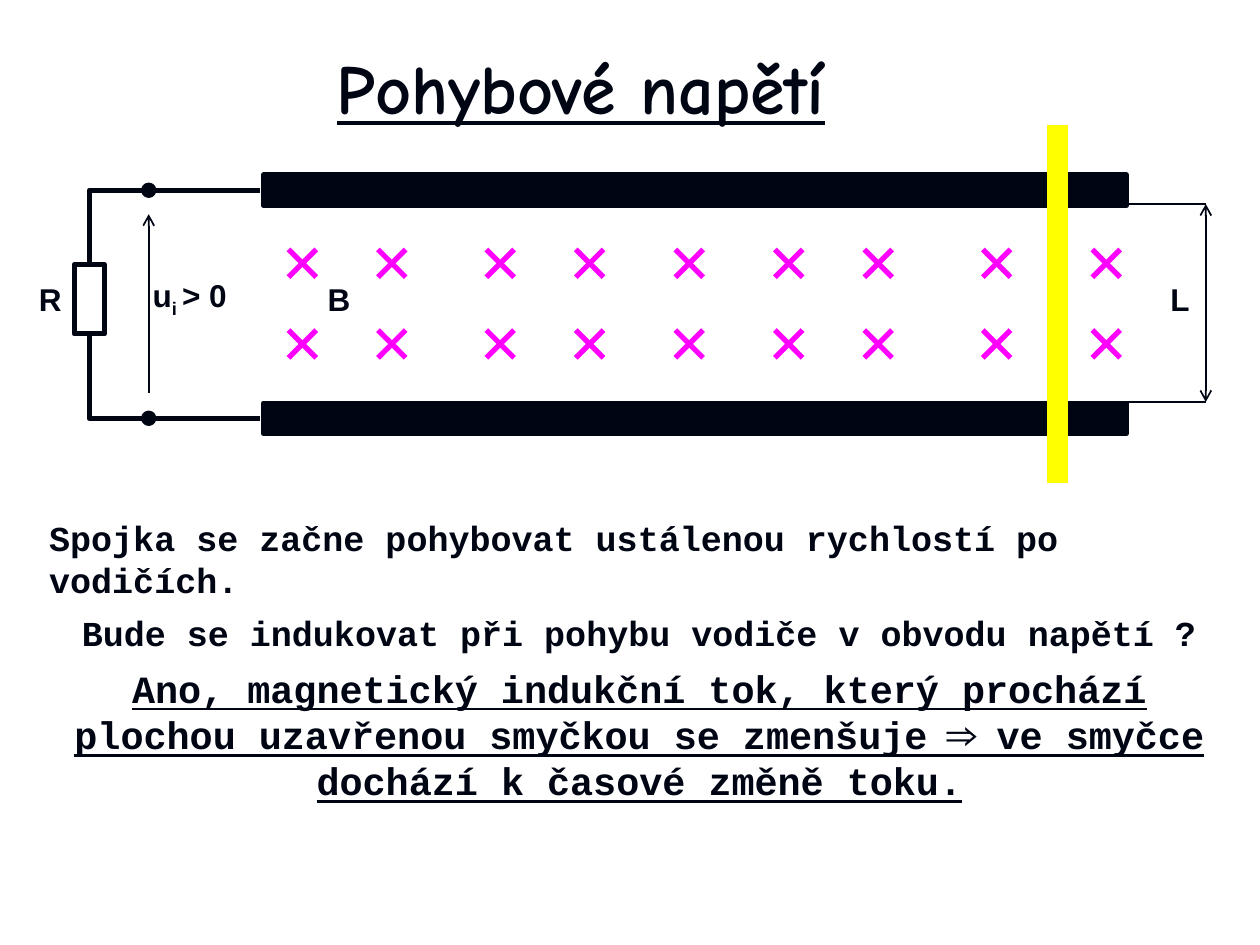
from lxml import etree
from pptx import Presentation
from pptx.dml.color import RGBColor
from pptx.enum.shapes import MSO_CONNECTOR, MSO_SHAPE
from pptx.enum.text import MSO_ANCHOR, MSO_AUTO_SIZE, PP_ALIGN
from pptx.oxml.ns import qn
from pptx.util import Inches, Pt

INK, FIELD, ROD = "000514", "FF00FF", "FFFF00"

TITLE = "Pohybové napětí"
BODY = [  # text, size, alignment, underline
    ("Spojka se začne pohybovat ustálenou rychlostí po vodičích.", 20, PP_ALIGN.LEFT, False),
    ("Bude se indukovat při pohybu vodiče v obvodu napětí ?", 20, PP_ALIGN.CENTER, False),
    ("Ano, magnetický indukční tok, který prochází plochou uzavřenou smyčkou "
     "se zmenšuje ⇒ ve smyčce dochází k časové změně toku.", 22, PP_ALIGN.CENTER, True),
]
LABELS = [("R", 0.27, 0.26), ("B", 2.56, 0.26), ("L", 9.25, 0.23)]  # text, left, width

RAIL_LEFT, RAIL_WIDTH, RAIL_HEIGHT = 2.09, 6.85, 0.24
RAIL_TOPS = (1.39, 3.2)
RESISTOR = (0.59, 2.1, 0.24, 0.55)
WIRES = [
    [(2.06, 1.51), (0.71, 1.51), (0.71, 2.08)],
    [(0.71, 2.67), (0.71, 3.32), (2.06, 3.32)],
]
TERMINAL_X, TERMINAL_SIZE = 1.18, 0.08
CROSS_LEFTS = (2.29, 3, 3.86, 4.57, 5.36, 6.15, 6.86, 7.8, 8.67)
CROSS_TOPS = (1.98, 2.62)
CROSS_SIZE = 0.22
GAP_TOP, GAP_BOTTOM, GAP_X = 1.62, 3.19, 9.57


def color(value):
    return RGBColor.from_string(value)


def add_line(page, start, end, line_color=INK, width=1, arrows=()):
    """Draw a straight line; arrows holds headEnd (start) and/or tailEnd (end)."""
    line = page.shapes.add_connector(
        MSO_CONNECTOR.STRAIGHT, *(Inches(value) for value in (*start, *end)))
    line.line.color.rgb = color(line_color)
    line.line.width = Pt(width)
    properties = line.line._get_or_add_ln()
    for arrow in arrows:
        etree.SubElement(properties, qn(f"a:{arrow}"), type="arrow")
    etree.SubElement(line._element.spPr, qn("a:effectLst"))
    return line


def style(shape, fill=None):
    shape.shadow.inherit = False
    if fill:
        shape.fill.solid()
        shape.fill.fore_color.rgb = color(fill)
    else:
        shape.fill.background()
    shape.line.color.rgb = color(INK)
    shape.line.width = Pt(3)


def add_preset(page, kind, area, fill=None):
    shape = page.shapes.add_shape(kind, *(Inches(value) for value in area))
    style(shape, fill)


def add_wire(page, points):
    corners = [(Inches(x), Inches(y)) for x, y in points]
    builder = page.shapes.build_freeform(*corners[0])
    builder.add_line_segments(corners[1:], close=False)
    style(builder.convert_to_shape())


def add_box(page, area, anchor=MSO_ANCHOR.TOP, wrap=True):
    box = page.shapes.add_textbox(*(Inches(value) for value in area))
    frame = box.text_frame
    frame.word_wrap = wrap
    frame.auto_size = MSO_AUTO_SIZE.NONE if wrap else MSO_AUTO_SIZE.SHAPE_TO_FIT_TEXT
    frame.vertical_anchor = anchor
    frame.margin_left = frame.margin_right = Inches(0.04)
    frame.margin_top = frame.margin_bottom = Inches(0.04)
    return frame


def add_text(para, text, font="Arial", size=18, underline=False, align=PP_ALIGN.RIGHT):
    para.alignment = align
    span = para.add_run()
    span.text = text
    span.font.name = font
    span.font.size = Pt(size)
    span.font.bold = True
    span.font.underline = underline
    span.font.color.rgb = color(INK)
    return span


def add_texts(page):
    title = add_box(page, (1.93, 0.21, 5.36, 0.95), MSO_ANCHOR.MIDDLE)
    add_text(title.paragraphs[0], TITLE, font="Comic Neue", size=40,
             underline=True, align=PP_ALIGN.CENTER)

    body = add_box(page, (0.35, 4.06, 9.45, 1.71))
    for index, (text, size, align, underline) in enumerate(BODY):
        para = body.add_paragraph() if index else body.paragraphs[0]
        para.space_before = Pt(0.3 * size)
        add_text(para, text, font="Courier New", size=size, underline=underline, align=align)

    for text, left, width in LABELS:
        label = add_box(page, (left, 2.18, width, 0.38), MSO_ANCHOR.MIDDLE, wrap=False)
        add_text(label.paragraphs[0], text)

    voltage = add_box(page, (1.11, 2.17, 0.73, 0.38), MSO_ANCHOR.MIDDLE, wrap=False)
    para = voltage.paragraphs[0]
    add_text(para, "u")
    subscript = add_text(para, "i ")
    subscript.font._element.set("baseline", "-25000")
    add_text(para, "> 0")


def add_circuit(page):
    for top in RAIL_TOPS:
        add_preset(page, MSO_SHAPE.RECTANGLE, (RAIL_LEFT, top, RAIL_WIDTH, RAIL_HEIGHT), INK)
        add_preset(page, MSO_SHAPE.OVAL, (TERMINAL_X - TERMINAL_SIZE / 2, top + 0.08,
                                          TERMINAL_SIZE, TERMINAL_SIZE), INK)
    add_preset(page, MSO_SHAPE.RECTANGLE, RESISTOR)
    for points in WIRES:
        add_wire(page, points)
    add_line(page, (TERMINAL_X, 3.12), (TERMINAL_X, 1.7), arrows=["tailEnd"])

    for top in CROSS_TOPS:
        for left in CROSS_LEFTS:
            right, bottom = left + CROSS_SIZE, top + CROSS_SIZE
            add_line(page, (left, top), (right, bottom), FIELD, 3)
            add_line(page, (left, bottom), (right, top), FIELD, 3)

    for y in (GAP_TOP, GAP_BOTTOM):
        add_line(page, (RAIL_LEFT + RAIL_WIDTH, y), (GAP_X, y))
    add_line(page, (GAP_X, GAP_TOP), (GAP_X, GAP_BOTTOM), arrows=["headEnd", "tailEnd"])
    add_line(page, (8.39, 0.99), (8.39, 3.83), ROD, 12)


def main():
    deck = Presentation()
    deck.slide_width, deck.slide_height = Inches(10), Inches(7.5)
    page = deck.slides.add_slide(deck.slide_layouts[6])
    add_texts(page)
    add_circuit(page)
    deck.save("out.pptx")


if __name__ == "__main__":
    main()
